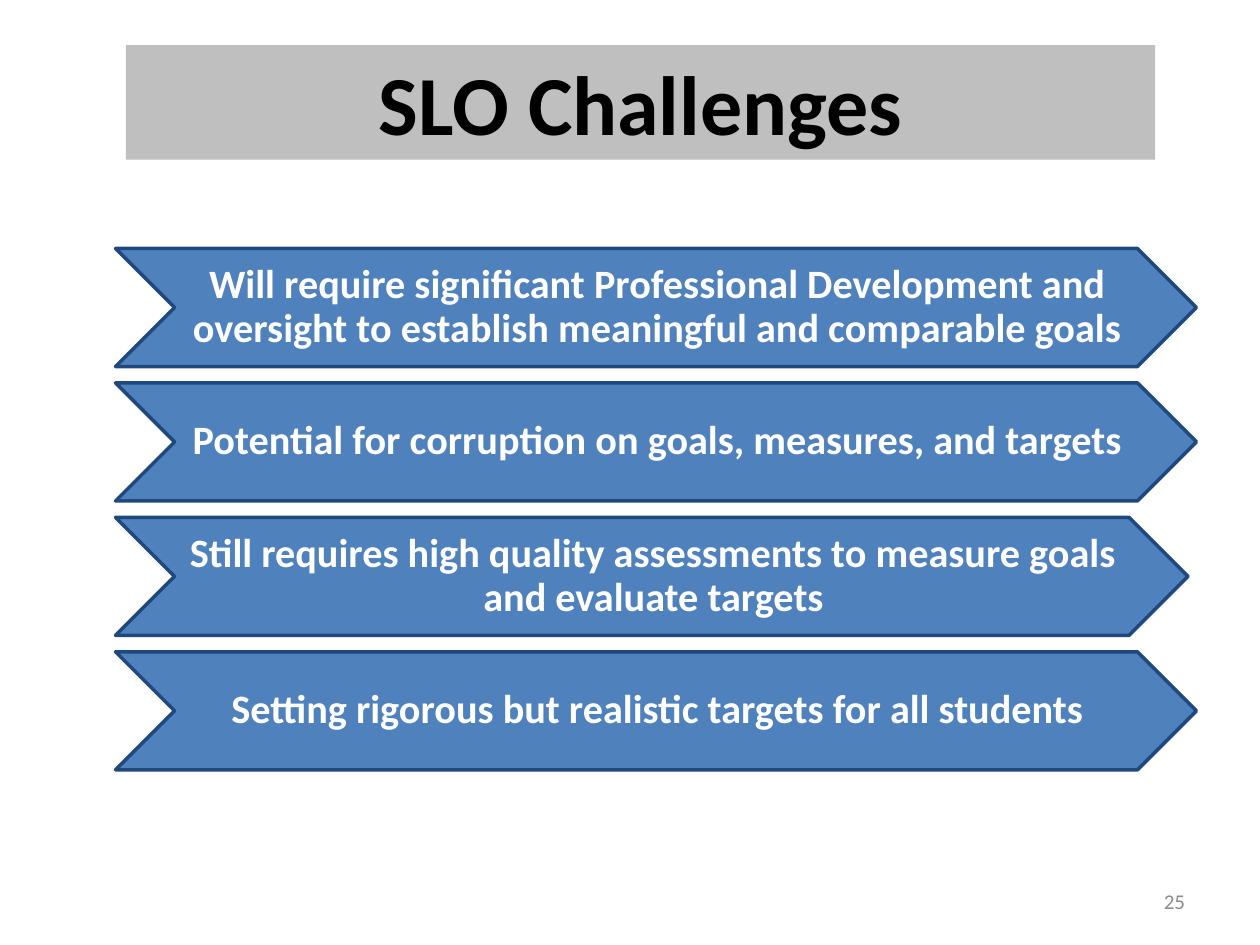
import pptx
import pptx.util
import pptx.dml.color
import pptx.enum.shapes
import pptx.enum.text

Cm = pptx.util.Cm
Pt = pptx.util.Pt
SHAPE = pptx.enum.shapes.MSO_SHAPE
ALIGN = pptx.enum.text.PP_ALIGN
ANCHOR = pptx.enum.text.MSO_ANCHOR


def color(value):
    return pptx.dml.color.RGBColor.from_string(value)


def write(shape, text, size, fill, bold=False, align=ALIGN.CENTER,
          anchor=ANCHOR.MIDDLE, spacing=None):
    frame = shape.text_frame
    frame.word_wrap = True
    frame.vertical_anchor = anchor
    paragraph = frame.paragraphs[0]
    paragraph.alignment = align
    paragraph.line_spacing = spacing
    run = paragraph.add_run()
    run.text = text
    run.font.name = "Calibri"
    run.font.size = Pt(size)
    run.font.bold = bold
    run.font.color.rgb = color(fill)
    return frame


deck = pptx.Presentation()
deck.slide_width = Cm(25.4)
deck.slide_height = Cm(19.05)
slide = deck.slides.add_slide(deck.slide_layouts[6])

title = slide.shapes.add_shape(SHAPE.RECTANGLE, Cm(2.54), Cm(0.91), Cm(20.75), Cm(2.31))
title.shadow.inherit = False
title.fill.solid()
title.fill.fore_color.rgb = color("BFBFBF")
title.line.fill.background()
title_frame = write(title, "SLO Challenges", size=48, fill="000000", bold=True, anchor=ANCHOR.TOP)
title_frame.auto_size = pptx.enum.text.MSO_AUTO_SIZE.SHAPE_TO_FIT_TEXT

page_number = slide.shapes.add_textbox(Cm(18.21), Cm(17.65), Cm(5.93), Cm(1.02))
write(page_number, "25", size=12, fill="8C8C8C", align=ALIGN.RIGHT)

challenges = [
    ("Will require significant Professional Development and oversight "
     "to establish meaningful and comparable goals", 21.79),
    ("Potential for corruption on goals, measures, and targets", 21.79),
    ("Still requires high quality assessments to measure goals and evaluate targets", 21.62),
    ("Setting rigorous but realistic targets for all students", 21.79),
]
for row, (challenge, width) in enumerate(challenges):
    arrow = slide.shapes.add_shape(
        SHAPE.CHEVRON, Cm(2.33), Cm(5.01 + row * 2.71), Cm(width), Cm(2.38))
    arrow.shadow.inherit = False
    arrow.fill.solid()
    arrow.fill.fore_color.rgb = color("4F81BD")
    arrow.line.color.rgb = color("1F497D")
    arrow.line.width = Pt(2)
    arrow_frame = write(arrow, challenge, size=23, fill="FFFFFF", bold=True, spacing=0.9)
    arrow_frame.margin_left = Cm(0.08)
    arrow_frame.margin_right = Cm(0)
    arrow_frame.margin_top = arrow_frame.margin_bottom = Cm(0.05)

deck.save("out.pptx")
